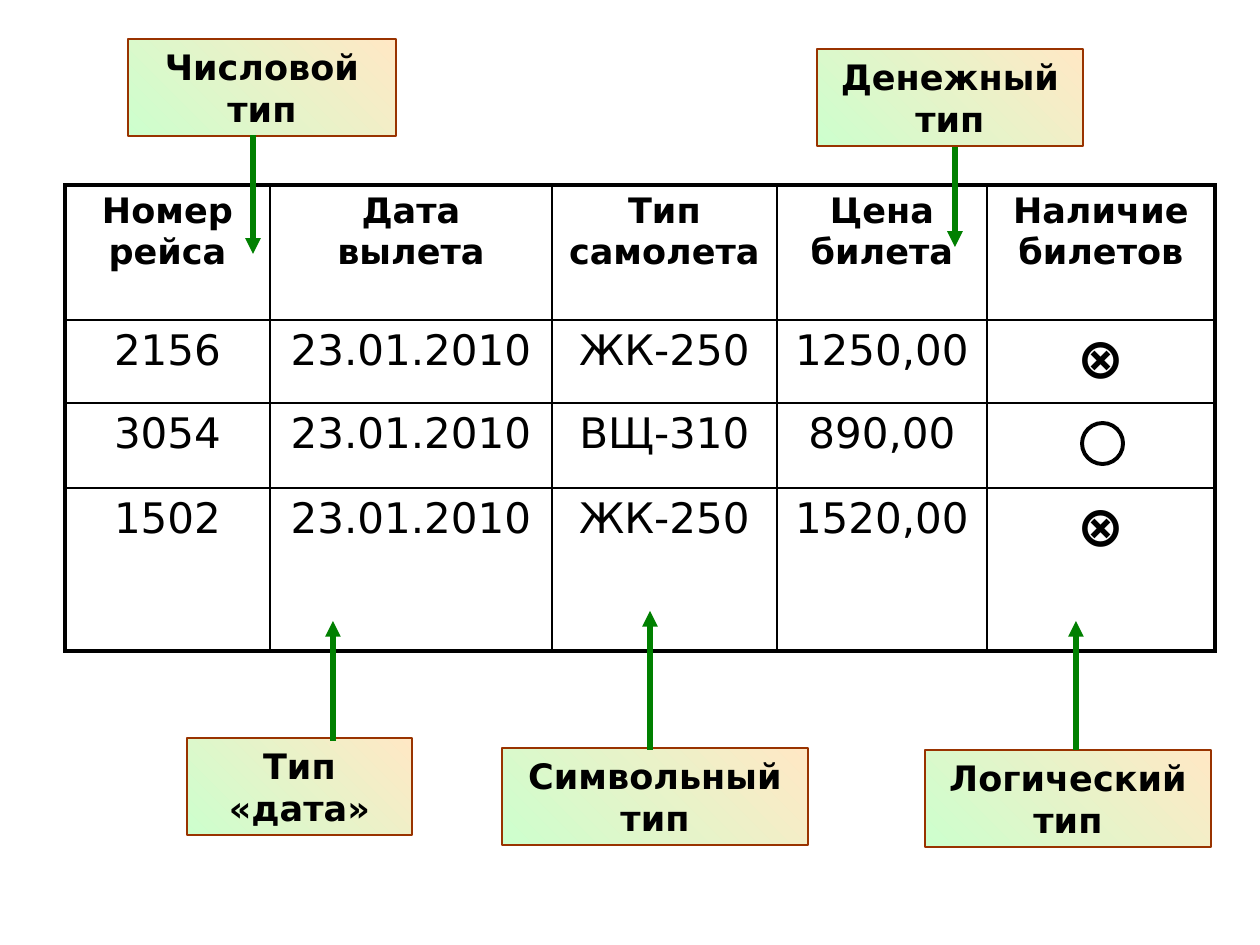
from dataclasses import dataclass

from lxml import etree
from pptx import Presentation, util as u
from pptx.dml.color import RGBColor
from pptx.enum import shapes, text
from pptx.oxml import ns

EMU_PER_PX = 914400 / 126
FONT = "DejaVu Sans"
COLOURS = {
    "ink": "000000",
    "paper": "FFFFFF",
    "mint": "CDFFCD",
    "peach": "FFE8C5",
    "brown": "993300",
    "green": "008000",
}
THICK, THIN = 2.25, 1
AVAILABLE = "⊗"
COLUMN_WIDTHS = [205, 282, 225, 210, 228]
ROW_HEIGHTS = [135, 83, 85, 163]
FLIGHTS = [
    ["Номер рейса", "Дата вылета", "Тип самолета", "Цена билета", "Наличие билетов"],
    ["2156", "23.01.2010", "ЖК-250", "1250,00", AVAILABLE],
    ["3054", "23.01.2010", "ВЩ-310", "890,00", ""],
    ["1502", "23.01.2010", "ЖК-250", "1520,00", AVAILABLE],
]


@dataclass
class TypeLabel:
    words: str
    left: int
    top: int
    width: int
    height: int = 97


@dataclass
class Pointer:
    x: int
    start: int
    end: int


LABELS = [
    TypeLabel("Числовой тип", 128, 39, 268),
    TypeLabel("Тип «дата»", 187, 738, 225),
    TypeLabel("Символьный тип", 502, 748, 306),
    TypeLabel("Логический тип", 925, 750, 286),
    TypeLabel("Денежный тип", 817, 49, 266),
]
POINTERS = [
    Pointer(253, 135, 254),
    Pointer(955, 147, 247),
    Pointer(650, 750, 611),
    Pointer(1076, 750, 621),
    Pointer(333, 741, 621),
]


def px(length: int) -> u.Emu:
    return u.Emu(round(length * EMU_PER_PX))


def colour(name: str) -> RGBColor:
    return RGBColor.from_string(COLOURS[name])


def set_all(target, values: dict) -> None:
    for name, value in values.items():
        setattr(target, name, value)


def write(frame, words: str, size: int, bold: bool) -> None:
    para = frame.paragraphs[0]
    para.alignment = text.PP_ALIGN.CENTER
    span = para.add_run()
    span.text = words
    set_all(span.font, {"name": FONT, "size": u.Pt(size), "bold": bold})
    span.font.color.rgb = colour("ink")


def outline(shape, name: str, width: float) -> None:
    shape.line.color.rgb = colour(name)
    shape.line.width = u.Pt(width)


def add_border(cell, side: str, width: float) -> None:
    properties = cell._tc.get_or_add_tcPr()
    line = etree.SubElement(properties, ns.qn(f"a:ln{side}"), w=str(u.Pt(width)))
    fill = etree.SubElement(line, ns.qn("a:solidFill"))
    etree.SubElement(fill, ns.qn("a:srgbClr"), val=COLOURS["ink"])


def add_flights(page) -> None:
    rows, columns = len(ROW_HEIGHTS), len(COLUMN_WIDTHS)
    table = page.shapes.add_table(
        rows, columns, px(65), px(185), px(sum(COLUMN_WIDTHS)), px(sum(ROW_HEIGHTS))
    ).table
    set_all(table, {"first_row": False, "horz_banding": False})
    for column, width in zip(table.columns, COLUMN_WIDTHS):
        column.width = px(width)
    for row, height in zip(table.rows, ROW_HEIGHTS):
        row.height = px(height)
    for r, values in enumerate(FLIGHTS):
        for c, words in enumerate(values):
            cell = table.cell(r, c)
            outer = {"L": c == 0, "R": c == columns - 1, "T": r == 0, "B": r == rows - 1}
            for side, is_outer in outer.items():
                add_border(cell, side, THICK if is_outer else THIN)
            cell.fill.solid()
            cell.fill.fore_color.rgb = colour("paper")
            if words:
                size = 20 if r == 0 else 32 if words == AVAILABLE else 24
                write(cell.text_frame, words, size, size != 24)


def add_empty_mark(page) -> None:
    mark = page.shapes.add_shape(
        shapes.MSO_SHAPE.OVAL, px(1082), px(423), px(41), px(41)
    )
    mark.shadow.inherit = False
    mark.fill.solid()
    mark.fill.fore_color.rgb = colour("paper")
    outline(mark, "ink", THICK)


def add_label(page, label: TypeLabel) -> None:
    box = page.shapes.add_shape(
        shapes.MSO_SHAPE.RECTANGLE,
        px(label.left), px(label.top), px(label.width), px(label.height),
    )
    box.shadow.inherit = False
    box.fill.gradient()
    box.fill.gradient_angle = 45
    for stop, name, position in zip(box.fill.gradient_stops, ("mint", "peach"), (0, 1)):
        stop.color.rgb = colour(name)
        stop.position = position
    outline(box, "brown", 0.75)
    set_all(box.text_frame, {
        "word_wrap": True,
        "auto_size": text.MSO_AUTO_SIZE.SHAPE_TO_FIT_TEXT,
        "vertical_anchor": text.MSO_ANCHOR.TOP,
    })
    write(box.text_frame, label.words, 20, True)


def add_pointer(page, pointer: Pointer) -> None:
    arrow = page.shapes.add_connector(
        shapes.MSO_CONNECTOR.STRAIGHT,
        px(pointer.x), px(pointer.start), px(pointer.x), px(pointer.end),
    )
    outline(arrow, "green", 3)
    properties = arrow._element.spPr
    etree.SubElement(properties.find(ns.qn("a:ln")), ns.qn("a:tailEnd"), type="triangle")
    etree.SubElement(properties, ns.qn("a:effectLst"))


def main() -> None:
    deck = Presentation()
    set_all(deck, {"slide_width": px(1260), "slide_height": px(945)})
    page = deck.slides.add_slide(deck.slide_layouts.get_by_name("Blank"))
    add_flights(page)
    add_empty_mark(page)
    for label in LABELS:
        add_label(page, label)
    for pointer in POINTERS:
        add_pointer(page, pointer)
    deck.save("out.pptx")


if __name__ == "__main__":
    main()
